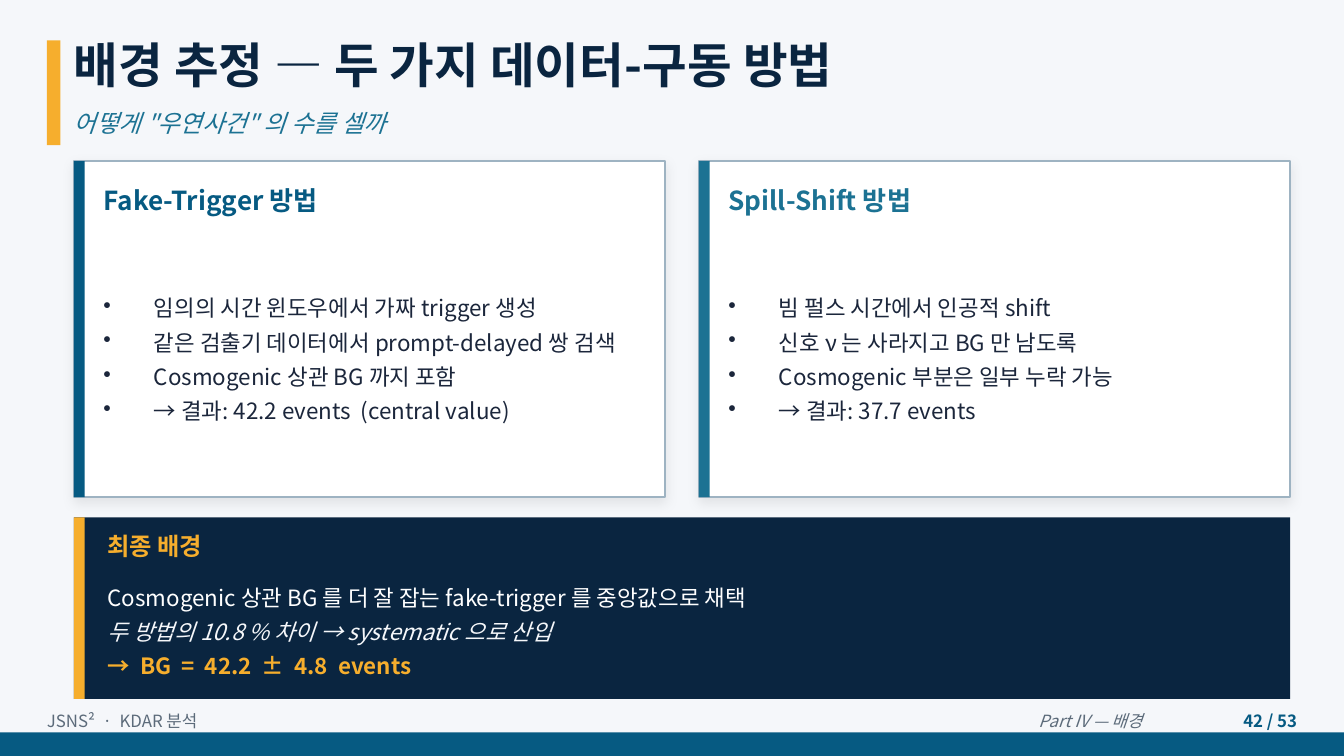
from lxml import etree
from pptx import Presentation
from pptx.dml.color import RGBColor
from pptx.enum.shapes import MSO_SHAPE
from pptx.enum.text import MSO_ANCHOR, PP_ALIGN
from pptx.oxml.ns import qn
from pptx.util import Pt

RECTANGLE = MSO_SHAPE.RECTANGLE
MIDDLE = MSO_ANCHOR.MIDDLE
LEFT, RIGHT = PP_ALIGN.LEFT, PP_ALIGN.RIGHT

PX = 4572  # 200 px to the inch
WIDTH, HEIGHT = 2000, 1125
FONT = "Noto Sans CJK KR"

BACKGROUND = RGBColor(0xF5, 0xF7, 0xFA)
NAVY = RGBColor(0x0A, 0x25, 0x40)
BLUE = RGBColor(0x06, 0x5A, 0x82)
TEAL = RGBColor(0x1C, 0x72, 0x93)
AMBER = RGBColor(0xF6, 0xAE, 0x2D)
WHITE = RGBColor(0xFF, 0xFF, 0xFF)
BORDER = RGBColor(0x9E, 0xB3, 0xC2)
INK = RGBColor(0x1B, 0x26, 0x3B)
GREY = RGBColor(0x5C, 0x6B, 0x7A)

ACCENT = 16  # width of the coloured bar on cards
INDENT = 75


def emu(*lengths):
    return [length * PX for length in lengths]


def add_box(slide, box, fill, line=None):
    shape = slide.shapes.add_shape(RECTANGLE, *emu(*box))
    shape.shadow.inherit = False
    shape.fill.solid()
    shape.fill.fore_color.rgb = fill
    if line is None:
        shape.line.fill.background()
    else:
        shape.line.color.rgb = line
        shape.line.width = Pt(1)
    return shape


def add_soft_shadow(shape):
    effects = shape._element.spPr.find(qn("a:effectLst"))
    shadow = etree.SubElement(effects, qn("a:outerShdw"), blurRad=str(Pt(6)),
                              dist=str(Pt(2)), dir="5400000", algn="ctr", rotWithShape="0")
    color = etree.SubElement(shadow, qn("a:srgbClr"), val="000000")
    etree.SubElement(color, qn("a:alpha"), val="8000")


def add_bullet(paragraph):
    properties = paragraph._p.get_or_add_pPr()
    properties.set("marL", str(INDENT * PX))
    properties.set("indent", str(-INDENT * PX))
    etree.SubElement(properties, qn("a:buSzPct"), val="100000")
    etree.SubElement(properties, qn("a:buChar"), char="•")


def add_text(slide, box, lines, *, size, color, bold=False, italic=False,
             align=LEFT, bullets=False, space_after=0):
    """Each line is a string, or a (string, format overrides) pair."""
    frame = slide.shapes.add_textbox(*emu(*box)).text_frame
    frame.word_wrap = True
    frame.vertical_anchor = MIDDLE
    frame.margin_left = frame.margin_top = frame.margin_right = frame.margin_bottom = 0
    for index, line in enumerate(lines):
        text, changes = (line, {}) if isinstance(line, str) else line
        paragraph = frame.paragraphs[0] if index == 0 else frame.add_paragraph()
        paragraph.alignment = align
        if bullets:
            add_bullet(paragraph)
        paragraph.space_after = Pt(space_after)
        run = paragraph.add_run()
        run.text = text
        font = run.font
        font.name = FONT
        font.size = Pt(size)
        font.bold = changes.get("bold", bold)
        font.italic = changes.get("italic", italic)
        font.color.rgb = changes.get("color", color)
        etree.SubElement(run._r.get_or_add_rPr(), qn("a:ea"), typeface=FONT)


def add_header(slide, box, title, subtitle):
    left, top, width, height = box
    add_box(slide, (left, top + 16, 20, height - 16), AMBER)
    add_text(slide, (left + 40, top, width - 40, 104), [title],
             size=26, color=NAVY, bold=True)
    add_text(slide, (left + 40, top + 104, width - 40, 68), [subtitle],
             size=13, color=TEAL, italic=True)


def add_method_card(slide, box, color, title, points):
    left, top, width, height = box
    add_soft_shadow(add_box(slide, box, WHITE, BORDER))
    add_box(slide, (left, top, ACCENT, height), color)
    add_text(slide, (left + 44, top + 20, width - 64, 76), [title],
             size=14, color=color, bold=True)
    add_text(slide, (left + 44, top + 110, width - 64, height - 130), points,
             size=12, color=INK, bullets=True, space_after=4)


def add_conclusion(slide, box, title, lines):
    left, top, width, height = box
    add_box(slide, box, NAVY)
    add_box(slide, (left, top, ACCENT, height), AMBER)
    add_text(slide, (left + 50, top + 10, width - 80, 64), [title],
             size=13, color=AMBER, bold=True)
    add_text(slide, (left + 50, top + 70, width - 80, height - 70), lines,
             size=12, color=WHITE, space_after=4)


def add_footer(slide, box, source, section, page):
    left, top, width, height = box
    add_box(slide, (left, top + 36, width, height - 36), BLUE)
    add_text(slide, (left + 70, top, 1000, 36), [source], size=9, color=GREY)
    add_text(slide, (left + 1000, top, 700, 36), [section],
             size=9, color=GREY, italic=True, align=RIGHT)
    add_text(slide, (left + 1720, top, 210, 36), [page],
             size=9, color=BLUE, bold=True, align=RIGHT)


def main():
    presentation = Presentation()
    presentation.slide_width, presentation.slide_height = emu(WIDTH, HEIGHT)
    slide = presentation.slides.add_slide(presentation.slide_layouts[6])
    slide.background.fill.solid()
    slide.background.fill.fore_color.rgb = BACKGROUND

    add_header(slide, (70, 44, 1860, 172), "배경 추정 — 두 가지 데이터-구동 방법",
               "어떻게 \"우연사건\" 의 수를 셀까")

    # Two methods side by side
    methods = [
        (BLUE, "Fake-Trigger 방법", [
            "임의의 시간 윈도우에서 가짜 trigger 생성",
            "같은 검출기 데이터에서 prompt-delayed 쌍 검색",
            "Cosmogenic 상관 BG 까지 포함",
            "→ 결과: 42.2 events  (central value)"]),
        (TEAL, "Spill-Shift 방법", [
            "빔 펄스 시간에서 인공적 shift",
            "신호 ν 는 사라지고 BG 만 남도록",
            "Cosmogenic 부분은 일부 누락 가능",
            "→ 결과: 37.7 events"]),
    ]
    card_width, gap = 880, 50
    for index, (color, title, points) in enumerate(methods):
        left = 110 + index * (card_width + gap)
        add_method_card(slide, (left, 240, card_width, 500), color, title, points)

    add_conclusion(slide, (110, 770, 1810, 270), "최종 배경", [
        "Cosmogenic 상관 BG 를 더 잘 잡는 fake-trigger 를 중앙값으로 채택",
        ("두 방법의 10.8 % 차이 → systematic 으로 산입", {"color": BACKGROUND, "italic": True}),
        ("→  BG  =  42.2  ±  4.8  events", {"color": AMBER, "bold": True})])

    footer_top = 1054
    add_footer(slide, (0, footer_top, WIDTH, HEIGHT - footer_top),
               "JSNS²  ·  KDAR 분석", "Part IV — 배경", "42 / 53")
    presentation.save("out.pptx")


if __name__ == "__main__":
    main()
